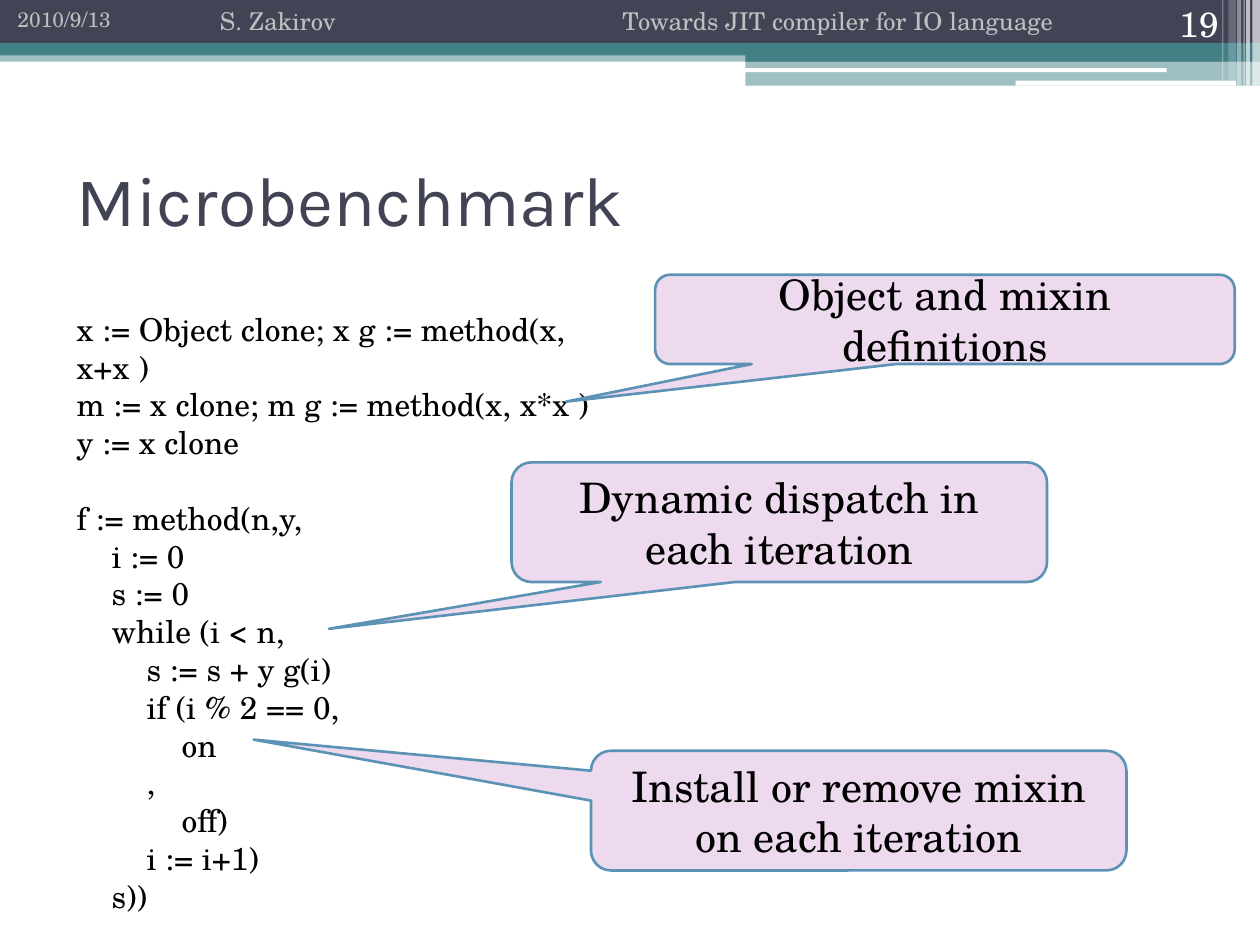
from lxml import etree
from pptx import Presentation
from pptx import util as u
from pptx.dml import color
from pptx.enum import shapes, text
from pptx.oxml import ns

SHAPE = shapes.MSO_SHAPE
ALIGN = text.PP_ALIGN
ANCHOR = text.MSO_ANCHOR


def rgb(value):
    return color.RGBColor.from_string(value)


class SlideWriter:
    serif, sans = "TeX Gyre Schola", "Karla"
    black, white, grey = "000000", "FFFFFF", "BFBFBF"
    navy, teal, pink, blue = "424456", "438086", "EDDAEE", "5C92B5"

    def __init__(self, page):
        self.page = page

    def add_span(self, para, words, size, ink, font=serif):
        span = para.add_run()
        span.text = words
        span.font.size = u.Pt(size)
        span.font.name = font
        span.font.color.rgb = rgb(ink)

    def add_shape(self, kind, place, fill, alpha=100):
        shape = self.page.shapes.add_shape(kind, *map(u.Pt, place))
        shape.shadow.inherit = False
        shape.fill.solid()
        shape.fill.fore_color.rgb = rgb(fill)
        shape.line.fill.background()
        if alpha < 100:
            tint = shape.fill._xPr.find(".//" + ns.qn("a:srgbClr"))
            etree.SubElement(tint, ns.qn("a:alpha")).set("val", str(alpha * 1000))
        return shape

    def add_title(self, place, words):
        title = self.page.shapes.title
        title.left, title.top, title.width, title.height = map(u.Pt, place)
        frame = title.text_frame
        frame.auto_size = text.MSO_AUTO_SIZE.NONE
        frame.vertical_anchor = ANCHOR.MIDDLE
        para = frame.paragraphs[0]
        para.alignment = ALIGN.LEFT
        self.add_span(para, words, 40, self.navy, self.sans)

    def add_label(self, place, words, size, ink, align=ALIGN.LEFT, anchor=ANCHOR.TOP):
        frame = self.page.shapes.add_textbox(*map(u.Pt, place)).text_frame
        frame.word_wrap = True
        frame.vertical_anchor = anchor
        para = frame.paragraphs[0]
        para.alignment = align
        self.add_span(para, words, size, ink)

    def add_code(self, place, blocks, size=18, indent=20, gap=21.6):
        frame = self.page.shapes.add_textbox(*map(u.Pt, place)).text_frame
        frame.word_wrap = True
        frame.margin_right = u.Pt(25)
        para = None
        for block in blocks:
            for number, (level, words) in enumerate(block):
                first = para is None
                para = frame.paragraphs[0] if first else frame.add_paragraph()
                if number == 0 and not first:
                    para.space_before = u.Pt(gap)
                if level:
                    props = para._p.get_or_add_pPr()
                    props.set("marL", str(u.Pt(level * indent)))
                    props.set("indent", "0")
                self.add_span(para, words, size, self.black)

    def add_callout(self, place, tip, words):
        box = self.add_shape(SHAPE.ROUNDED_RECTANGULAR_CALLOUT, place, self.pink)
        box.adjustments[0], box.adjustments[1] = tip
        box.line.color.rgb = rgb(self.blue)
        box.line.width = u.Pt(1.5)
        frame = box.text_frame
        frame.word_wrap = True
        frame.vertical_anchor = ANCHOR.MIDDLE
        para = frame.paragraphs[0]
        para.alignment = ALIGN.CENTER
        self.add_span(para, words, 24, self.black)


def main():
    deck = Presentation()
    deck.slide_width, deck.slide_height = u.Pt(720), u.Pt(540)
    writer = SlideWriter(deck.slides.add_slide(deck.slide_layouts[5]))

    bands = [
        ((0, 28.8, 720, 6.5), writer.teal, 50),
        ((0, 0, 720, 24.5), writer.navy, 100),
        ((0, 24.5, 720, 7.2), writer.teal, 100),
        ((426, 28, 294, 7.2), writer.teal, 100),
        ((426, 34.6, 294, 14.4), writer.teal, 50),
    ]
    for place, fill, alpha in bands:
        writer.add_shape(SHAPE.RECTANGLE, place, fill, alpha)
    for place in [(425.5, 39, 241.2, 2.2), (580.3, 46.1, 126, 2.9)]:
        writer.add_shape(SHAPE.ROUNDED_RECTANGLE, place, writer.white)
    stripes = [
        (715.7, 4.3, 49, 65),
        (712.1, 2.2, 49, 65),
        (710.6, 0.7, 49, 60),
        (707, 2.2, 49, 40),
        (702, 4.3, 46.1, 20),
        (698.4, 0.7, 46.1, 30),
    ]
    for left, width, height, alpha in stripes:
        place = (left, 0, width, height)
        writer.add_shape(SHAPE.RECTANGLE, place, writer.white, alpha)

    writer.add_title((36.7, 71.3, 648, 84.2), "Microbenchmark")
    definitions = [
        (0, "x := Object clone; x g := method(x, x+x )"),
        (0, "m := x clone; m g := method(x, x*x )"),
        (0, "y := x clone"),
    ]
    benchmark = [
        (0, "f := method(n,y,"),
        (1, "i := 0"),
        (1, "s := 0"),
        (1, "while (i < n,"),
        (2, "s := s + y g(i)"),
        (2, "if (i % 2 == 0,"),
        (3, "on"),
        (2, ","),
        (3, "off)"),
        (2, "i := i+1)"),
        (1, "s))"),
    ]
    writer.add_code((36.7, 173.5, 337.7, 334), [definitions, benchmark])

    callouts = [
        ((374.4, 157, 331.2, 51), (-0.654, 0.922), "Object and mixin definitions"),
        ((292.3, 264.2, 306, 68.4), (-0.841, 0.891), "Dynamic dispatch in each iteration"),
        ((337.7, 429, 306, 68.4), (-1.13, -0.593), "Install or remove mixin on each iteration"),
    ]
    for place, tip, words in callouts:
        writer.add_callout(place, tip, words)

    writer.add_label((2.9, 0, 75.6, 36), "2010/9/13", 12, writer.grey)
    writer.add_label((118.6, 0, 120, 36), "S. Zakirov", 14, writer.grey)
    writer.add_label((300, 0, 309, 36), "Towards JIT compiler for IO language",
                     14, writer.grey, ALIGN.RIGHT)
    writer.add_label((614.9, 0, 88.6, 28.8), "19", 20, writer.white,
                     ALIGN.RIGHT, ANCHOR.BOTTOM)
    deck.save("out.pptx")


if __name__ == "__main__":
    main()
